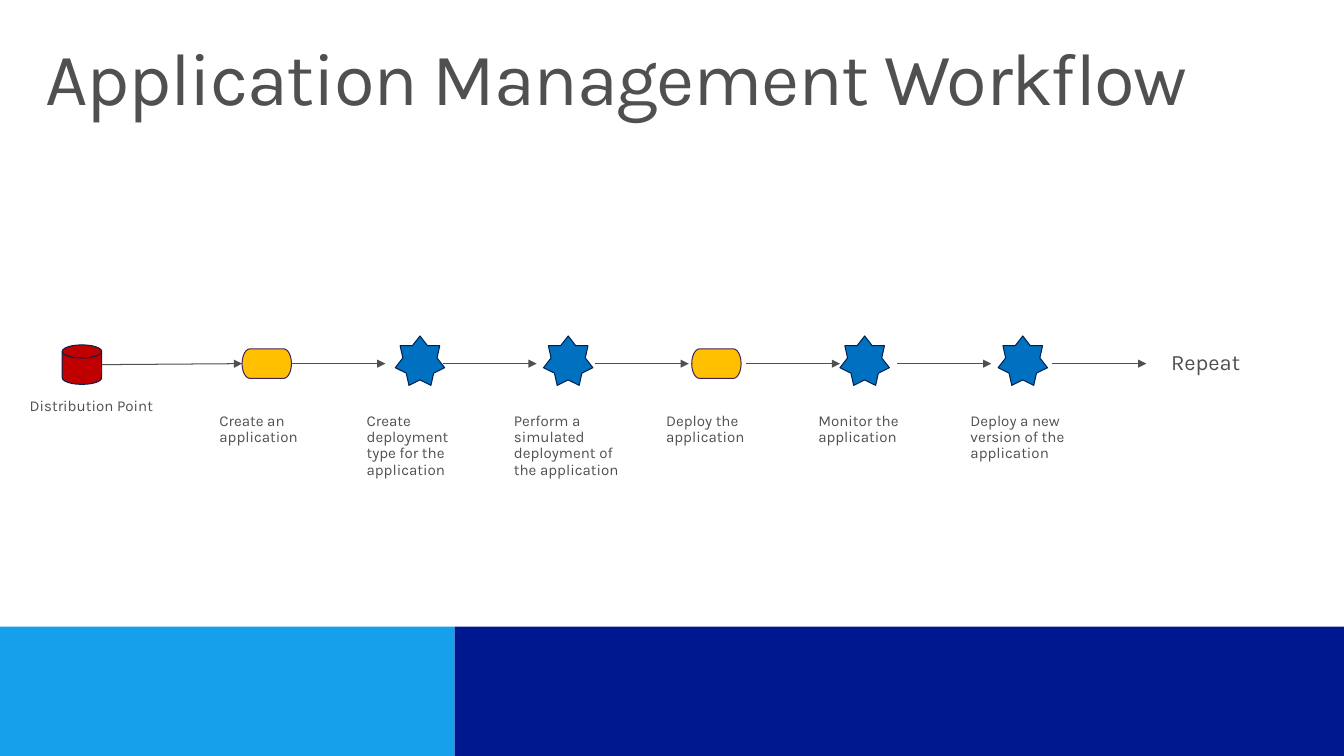
import pptx
import pptx.dml.color
import pptx.enum.shapes
import pptx.enum.text
import pptx.oxml
import pptx.oxml.ns
import pptx.util
from pptx.util import Inches

SHAPES = pptx.enum.shapes.MSO_SHAPE
GREY = "505050"
NAVY = "002050"
FLOW_Y = 3.68
ARROW_LENGTH = 0.95
LABEL_TOP = 4.02

STAR_LEFTS = [4, 5.5, 8.5, 10.1]
TERMINATOR_LEFTS = [2.45, 7]
ARROW_STARTS = [2.95, 4.48, 6.02, 7.55, 9.08, 10.65]
STEP_LABELS = [
    ("Create an application", 2.02, 1.5, 0.66),
    ("Create deployment type for the application", 3.51, 1.5, 0.99),
    ("Perform a simulated deployment of the application", 5, 1.55, 0.99),
    ("Deploy the application", 6.54, 1.55, 0.66),
    ("Monitor the application", 8.08, 1.55, 0.66),
    ("Deploy a new version of the application", 9.62, 1.55, 0.82),
]


def color(value):
    return pptx.dml.color.RGBColor.from_string(value)


def add_node(page, kind, left, top, width, height, fill, outline=None):
    node = page.shapes.add_shape(
        kind, Inches(left), Inches(top), Inches(width), Inches(height))
    node.shadow.inherit = False
    node.fill.solid()
    node.fill.fore_color.rgb = color(fill)
    if outline:
        node.line.color.rgb = color(outline)
        node.line.width = pptx.util.Pt(0.75)
    else:
        node.line.fill.background()


def add_text(page, text, left, top, width, height, size, inset_x=0.2, inset_y=0.16):
    box = page.shapes.add_textbox(
        Inches(left), Inches(top), Inches(width), Inches(height))
    frame = box.text_frame
    frame.text = text
    frame.word_wrap = True
    frame.vertical_anchor = pptx.enum.text.MSO_ANCHOR.TOP
    frame.margin_left = frame.margin_right = Inches(inset_x)
    frame.margin_top = frame.margin_bottom = Inches(inset_y)
    para = frame.paragraphs[0]
    para.line_spacing = 0.9
    span = para.runs[0]
    span.font.name = "Karla"
    span.font.size = pptx.util.Pt(size)
    span.font.color.rgb = color(GREY)
    return box


def add_title(page, text):
    box = add_text(page, text, 0.3, 0.32, 13, 1, 54, 0.16, 0.1)
    span = box.text_frame.paragraphs[0].runs[0]
    span.font._element.set("spc", "-100")


def add_label(page, text, left, top, width, height, size=11):
    box = add_text(page, text, left, top, width, height, size)
    box.text_frame.auto_size = pptx.enum.text.MSO_AUTO_SIZE.SHAPE_TO_FIT_TEXT
    box.text_frame.paragraphs[0].space_after = pptx.util.Pt(6)


def add_arrow(page, start_x, start_y, end_x, end_y):
    arrow = page.shapes.add_connector(
        pptx.enum.shapes.MSO_CONNECTOR.STRAIGHT,
        Inches(start_x), Inches(start_y), Inches(end_x), Inches(end_y))
    arrow.line.color.rgb = color(GREY)
    arrow.line.width = pptx.util.Pt(0.75)
    head = pptx.oxml.parse_xml(
        f'<a:tailEnd {pptx.oxml.ns.nsdecls("a")} type="triangle"/>')
    arrow.line._get_or_add_ln().append(head)
    arrow._element.spPr.append(
        pptx.oxml.parse_xml(f'<a:effectLst {pptx.oxml.ns.nsdecls("a")}/>'))


def main():
    deck = pptx.Presentation()
    deck.slide_width = Inches(13.6)
    deck.slide_height = Inches(7.65)
    page = deck.slides.add_slide(deck.slide_layouts[6])

    add_title(page, "Application Management Workflow")
    add_node(page, SHAPES.RECTANGLE, 0, 6.34, 4.6, 1.31, "169FEB")
    add_node(page, SHAPES.RECTANGLE, 4.6, 6.34, 9, 1.31, "00188F")

    add_node(page, SHAPES.FLOWCHART_MAGNETIC_DISK,
             0.63, 3.49, 0.4, 0.4, "C00000", NAVY)
    for left in STAR_LEFTS:
        add_node(page, SHAPES.STAR_7_POINT, left, 3.4, 0.5, 0.5, "0070C0", NAVY)

    add_label(page, "Distribution Point", 0.1, 3.95, 1.99, 0.49)
    for text, left, width, height in STEP_LABELS:
        add_label(page, text, left, LABEL_TOP, width, height)

    add_arrow(page, 1.03, 3.69, 2.45, FLOW_Y)
    for start in ARROW_STARTS:
        add_arrow(page, start, FLOW_Y, start + ARROW_LENGTH, FLOW_Y)

    for left in TERMINATOR_LEFTS:
        add_node(page, SHAPES.FLOWCHART_TERMINATOR,
                 left, 3.53, 0.5, 0.3, "FFC000", "442359")
    add_label(page, "Repeat", 11.65, 3.44, 1.55, 0.57, 16)

    deck.save("out.pptx")


if __name__ == "__main__":
    main()
